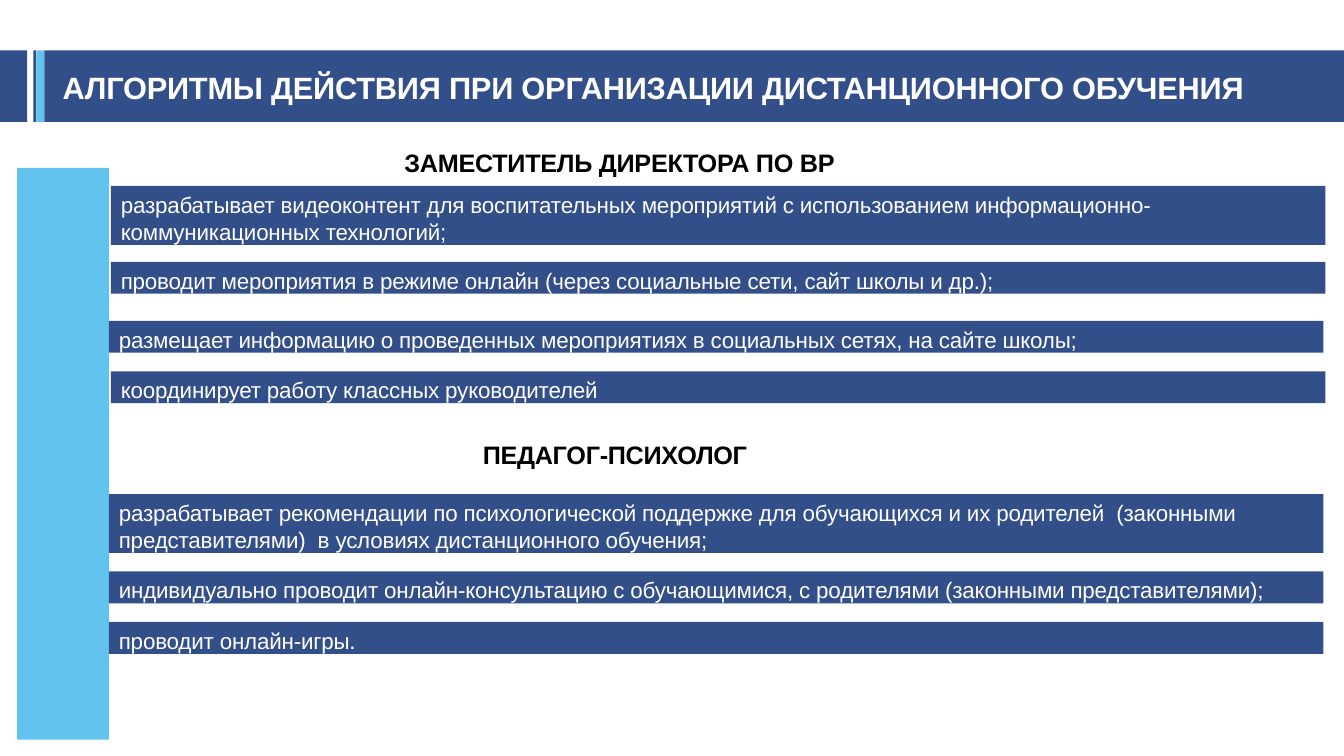
from pptx import Presentation
from pptx.dml.color import RGBColor
from pptx.enum.shapes import MSO_SHAPE
from pptx.enum.text import MSO_ANCHOR, MSO_AUTO_SIZE, PP_ALIGN
from pptx.util import Pt

NAVY = RGBColor(0x33, 0x4F, 0x89)
SKY = RGBColor(0x61, 0xC3, 0xEE)
WHITE = RGBColor(0xFF, 0xFF, 0xFF)
BLACK = RGBColor(0x00, 0x00, 0x00)

TITLE = "АЛГОРИТМЫ ДЕЙСТВИЯ ПРИ ОРГАНИЗАЦИИ ДИСТАНЦИОННОГО ОБУЧЕНИЯ"
SHORT_BAR, TALL_BAR = 22.8, 42.1
DEPUTY_DUTIES = [
    (1.4, 29.8, TALL_BAR, "разрабатывает видеоконтент для воспитательных мероприятий с использованием "
     "информационно-коммуникационных технологий;"),
    (1.4, 84.1, SHORT_BAR, "проводит мероприятия в режиме онлайн (через социальные сети, сайт школы и др.);"),
    (0, 126.2, SHORT_BAR, "размещает информацию о проведенных мероприятиях в социальных сетях, "
     "на сайте школы;"),
    (1.4, 162.3, SHORT_BAR, "координирует работу классных руководителей"),
]
PSYCHOLOGIST_DUTIES = [
    (0, 41.1, TALL_BAR, "разрабатывает рекомендации по психологической поддержке для обучающихся "
     "и их родителей  (законными представителями)  в условиях дистанционного обучения;"),
    (0, 96.4, SHORT_BAR, "индивидуально проводит онлайн-консультацию с обучающимися, с родителями "
     "(законными представителями);"),
    (0, 132.5, SHORT_BAR, "проводит онлайн-игры."),
]


def add_block(slide, left, top, width, height, color):
    """Add a plain filled rectangle without outline or shadow."""
    block = slide.shapes.add_shape(MSO_SHAPE.RECTANGLE, Pt(left), Pt(top), Pt(width), Pt(height))
    block.shadow.inherit = False
    block.fill.solid()
    block.fill.fore_color.rgb = color
    block.line.fill.background()
    return block


def write(shape, text, size, color, bold=False, indent=0.7, inset=2, tracking=-10):
    """Put one left-aligned paragraph at the top of a shape."""
    frame = shape.text_frame
    frame.text = text
    frame.word_wrap = True
    frame.auto_size = MSO_AUTO_SIZE.NONE
    frame.vertical_anchor = MSO_ANCHOR.TOP
    frame.margin_left, frame.margin_top = Pt(indent), Pt(inset)
    frame.margin_right = frame.margin_bottom = 0
    paragraph = frame.paragraphs[0]
    paragraph.alignment = PP_ALIGN.LEFT
    paragraph.line_spacing = 1.0
    paragraph.space_before = Pt(0)
    font = paragraph.runs[0].font
    font.name, font.size, font.bold = "Arial", Pt(size), bold
    font.color.rgb = color
    paragraph.runs[0]._r.get_or_add_rPr().set("spc", str(tracking))


def add_header(slide, left, top, width, height):
    """Draw the striped title band and place the title on it."""
    stripes = [(0, 19.4, NAVY), (23.8, 25.9, NAVY), (25.9, 31.7, SKY), (31.7, width, NAVY)]
    for start, end, color in stripes:
        add_block(slide, left + start, top, end - start, height, color)
    title = slide.shapes.title
    title.left, title.top = Pt(left + 44), Pt(top + 10.8)
    title.width, title.height = Pt(856), Pt(28.1)
    write(title, TITLE, 22, WHITE, bold=True, tracking=-15)
    slide.shapes._spTree.append(title._element)


def add_section(slide, left, top, width, heading_offset, heading, duties):
    """Place a role heading and the bars with its duties."""
    heading_box = slide.shapes.add_textbox(Pt(left + heading_offset), Pt(top), Pt(496), Pt(23))
    write(heading_box, heading, 18, BLACK, bold=True, tracking=-20)
    for shift, offset, height, duty in duties:
        bar = add_block(slide, left + shift, top + offset, width, height, NAVY)
        write(bar, duty, 16, WHITE, indent=7.2, inset=3.6)


def main():
    """Build the slide and save it."""
    deck = Presentation()
    deck.slide_width, deck.slide_height = Pt(960), Pt(540)
    slide = deck.slides.add_slide(deck.slide_layouts[5])
    add_header(slide, 0, 36, 960, 51.1)
    add_block(slide, 12.2, 120, 65.6, 408.4, SKY)
    add_section(slide, 77.8, 103, 867.5, 210.4, "ЗАМЕСТИТЕЛЬ ДИРЕКТОРА ПО ВР", DEPUTY_DUTIES)
    add_section(slide, 77.8, 311.8, 867.5, 266.4, "ПЕДАГОГ-ПСИХОЛОГ", PSYCHOLOGIST_DUTIES)
    deck.save("out.pptx")


if __name__ == "__main__":
    main()
